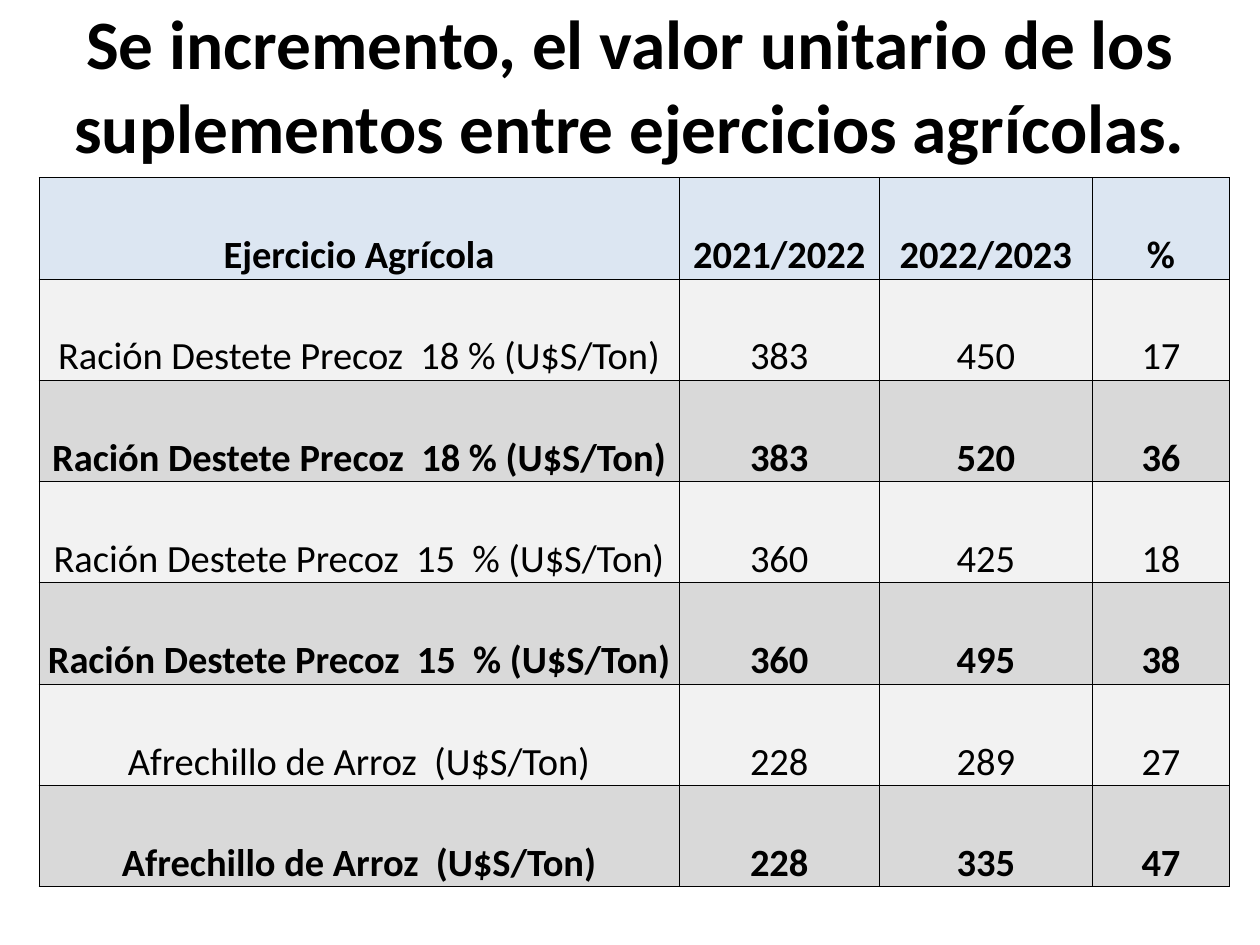
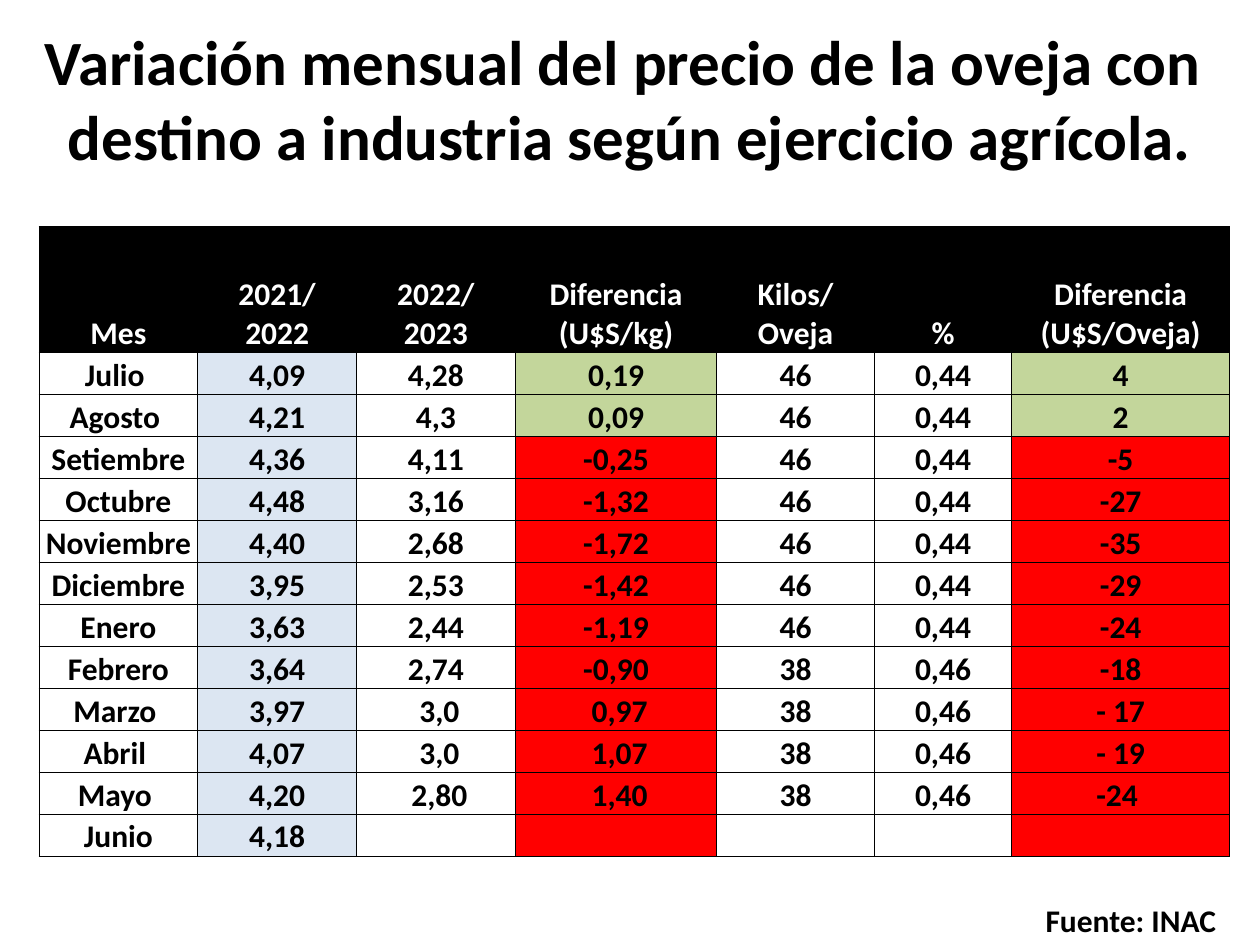
import pptx
import pptx.util
import pptx.dml.color
import pptx.enum.text
import pptx.oxml
import pptx.oxml.ns

Inches = pptx.util.Inches
ALIGN = pptx.enum.text.PP_ALIGN
ANCHOR = pptx.enum.text.MSO_ANCHOR

BLACK, WHITE = "000000", "FFFFFF"
BLUE, LIGHT, GREY = "DCE6F2", "F2F2F2", "D9D9D9"
GREEN, RED = "C3D69B", "FF0000"
LEFT, WIDE = 0.31, 9.45  # both tables share edge and width


def color(code):
    return pptx.dml.color.RGBColor.from_string(code)


def assign(item, values):
    for name, value in values.items():
        setattr(item, name, value)


class Deck:
    font = "Calibri"

    def __init__(self):
        self.file = pptx.Presentation()
        assign(self.file, {"slide_width": Inches(10), "slide_height": Inches(7.5)})

    def page(self):
        self.slide = self.file.slides.add_slide(self.file.slide_layouts[6])

    def letter(self, frame, text, size, ink=BLACK, bold=True, align=ALIGN.CENTER):
        """One paragraph a line; a vertical tab breaks inside a paragraph."""
        for row, line in enumerate(text.split("\n")):
            para = frame.add_paragraph() if row else frame.paragraphs[0]
            assign(para, {"text": line, "alignment": align})
            for run in para.runs:
                assign(run.font, {"name": self.font, "size": pptx.util.Pt(size),
                                  "bold": bold})
                run.font.color.rgb = color(ink)

    def label(self, text, box, size, wrap=True, anchor=ANCHOR.TOP, align=ALIGN.LEFT):
        frame = self.slide.shapes.add_textbox(*map(Inches, box)).text_frame
        assign(frame, {"word_wrap": wrap, "vertical_anchor": anchor})
        self.letter(frame, text, size, align=align)

    def title(self, text, top, high, size):
        self.label(text, (0, top, 10, high), size,
                   anchor=ANCHOR.MIDDLE, align=ALIGN.CENTER)

    def border(self, cell):
        props = cell._tc.get_or_add_tcPr()
        for side in "LRTB":
            props.append(pptx.oxml.parse_xml(
                f'<a:ln{side} {pptx.oxml.ns.nsdecls("a")} w="6350"><a:solidFill>'
                f'<a:srgbClr val="{BLACK}"/></a:solidFill></a:ln{side}>'))

    def table(self, rows, cols, top, highs, size, style):
        """style(row, col) gives fill, ink and bold of a cell."""
        grid = self.slide.shapes.add_table(
            len(rows), len(cols), Inches(LEFT), Inches(top),
            Inches(WIDE), Inches(sum(highs))).table
        assign(grid, {"first_row": False, "horz_banding": False})
        for col, wide in zip(grid.columns, cols):
            col.width = Inches(wide)
        for row, high in zip(grid.rows, highs):
            row.height = Inches(high)
        edge = Inches(0.01)
        form = {"margin_left": edge, "margin_right": edge, "margin_top": edge,
                "margin_bottom": 0, "vertical_anchor": ANCHOR.BOTTOM}
        for r, row in enumerate(rows):
            for c, text in enumerate(row):
                cell = grid.cell(r, c)
                assign(cell, form)
                self.border(cell)
                fill, ink, bold = style(r, c)
                if fill:
                    cell.fill.solid()
                    cell.fill.fore_color.rgb = color(fill)
                else:
                    cell.fill.background()
                self.letter(cell.text_frame, text, size, ink, bold)


# Supplement prices
FEEDS = [
    ("Ejercicio Agrícola", "2021/2022", "2022/2023", "%"),
    ("Ración Destete Precoz  18 % (U$S/Ton)", "383", "450", "17"),
    ("Ración Destete Precoz  18 % (U$S/Ton)", "383", "520", "36"),
    ("Ración Destete Precoz  15  % (U$S/Ton)", "360", "425", "18"),
    ("Ración Destete Precoz  15  % (U$S/Ton)", "360", "495", "38"),
    ("Afrechillo de Arroz  (U$S/Ton)", "228", "289", "27"),
    ("Afrechillo de Arroz  (U$S/Ton)", "228", "335", "47"),
]

# Monthly ewe prices
MONTHS = [
    ("Mes", "2021/\n2022", "2022/\n2023", "Diferencia\n(U$S/kg)",
     "Kilos/\nOveja", "%", "Diferencia (U$S/Oveja)"),
    ("Julio ", "4,09", "4,28", "0,19", "46", "0,44", "4"),
    ("Agosto ", "4,21", "4,3", "0,09", "46", "0,44", "2"),
    ("Setiembre", "4,36", "4,11", "-0,25", "46", "0,44", "-5"),
    ("Octubre", "4,48", "3,16", "-1,32", "46", "0,44", "-27"),
    ("Noviembre", "4,40", "2,68", "-1,72", "46", "0,44", "-35"),
    ("Diciembre", "3,95", "2,53", "-1,42", "46", "0,44", "-29"),
    ("Enero", "3,63", "2,44", "-1,19", "46", "0,44", "-24"),
    ("Febrero", "3,64", "2,74", "-0,90", "38", "0,46", "-18"),
    ("Marzo ", "3,97", " 3,0", " 0,97", "38", "0,46", "- 17"),
    ("Abril ", "4,07", " 3,0", " 1,07", "38", "0,46", "- 19"),
    ("Mayo ", "4,20", " 2,80", " 1,40", "38", "0,46", "-24 "),
    ("Junio", "4,18", "", "", "", "", ""),
]


def feed_style(row, col):
    if row == 0:
        return BLUE, BLACK, True
    even = row % 2 == 0
    return GREY if even else LIGHT, BLACK, even


def month_style(row, col):
    if row == 0:
        return BLACK, WHITE, True
    gain = GREEN if row <= 2 else RED
    return {1: BLUE, 2: WHITE, 3: gain, 6: gain}.get(col), BLACK, True


def main():
    deck = Deck()

    # Slide 1: supplements
    deck.page()
    deck.title("Se incremento, el valor unitario de los suplementos "
               "entre ejercicios agrícolas.", 0, 1.33, 39.6)
    deck.table(FEEDS, (5.08, 1.59, 1.69, 1.09), 1.41,
               [5.63 / len(FEEDS)] * len(FEEDS), 22, feed_style)

    # Slide 2: ewe price by month
    deck.page()
    deck.title("Variación mensual del precio de la oveja con \v"
               "destino a industria según ejercicio agrícola.", 0.3, 0.95, 36)
    deck.label("Fuente: INAC", (8.2, 7.1, 1.8, 0.4), 18, wrap=False)
    body = len(MONTHS) - 1
    deck.table(MONTHS, (1.26, 1.26, 1.26, 1.6, 1.25, 1.09, 1.73), 1.8,
               [1] + [4 / body] * body, 18, month_style)

    deck.file.save("out.pptx")


if __name__ == "__main__":
    main()
